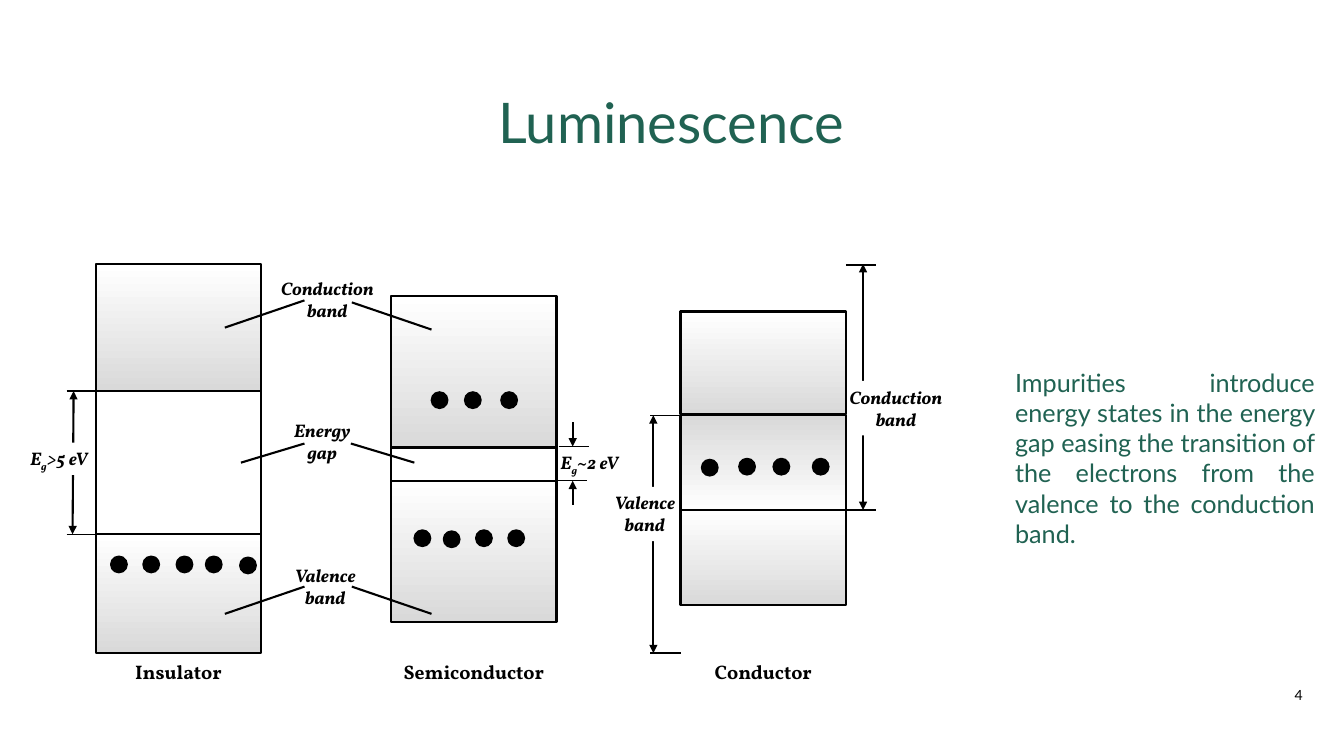
from lxml.etree import SubElement
from pptx import Presentation
from pptx.dml.color import RGBColor
from pptx.enum.shapes import MSO_CONNECTOR as Conn, MSO_SHAPE as Kind
from pptx.enum.text import MSO_ANCHOR as Anchor, MSO_AUTO_SIZE as Auto, PP_ALIGN as Align
from pptx.oxml import parse_xml
from pptx.oxml.ns import nsdecls, qn
from pptx.util import Emu, Pt

# One px is a hundredth of an inch
SCALE = 9144
BLACK = RGBColor(0, 0, 0)
WHITE = RGBColor(255, 255, 255)
GREY = RGBColor(0xD9, 0xD9, 0xD9)
GREEN = RGBColor(0x20, 0x62, 0x52)

TITLE = {"name": "Lato", "size": Pt(40)}
BODY = {"name": "Lato", "size": Pt(18)}
PAGE = {"name": "Lato", "size": Pt(10)}
NAME = {"name": "Vollkorn", "size": Pt(14), "bold": True}
LABEL = {"name": "Vollkorn", "size": Pt(13), "bold": True, "italic": True}

# Left edges of the three columns and their common width
LEFTS = {"Insulator": 95, "Semiconductor": 388, "Conductor": 675}
WIDE = 164
DOT = 16


def px(*vals):
    return [Emu(val * SCALE) for val in vals]


def add_text(slide, place, parts, form, color=BLACK, align=Align.CENTER,
             anchor=Anchor.TOP, fill=None, wrap=True, grow=True):
    """Place one paragraph; every second part is a subscript."""
    box = slide.shapes.add_textbox(*px(*place))
    if fill is not None:
        box.fill.solid()
        box.fill.fore_color.rgb = fill
    frame = box.text_frame
    frame.word_wrap = wrap
    frame.auto_size = Auto.SHAPE_TO_FIT_TEXT if grow else Auto.NONE
    frame.vertical_anchor = anchor
    para = frame.paragraphs[0]
    para.alignment = align
    for i, part in enumerate(parts):
        run = para.add_run()
        run.text = part
        for key, val in form.items():
            setattr(run.font, key, val)
        run.font.color.rgb = color
        if i % 2:
            run._r.get_or_add_rPr().set("baseline", "-25000")
    return box


def add_glow(box):
    """Give the text a soft drop shadow."""
    props = box.text_frame.paragraphs[0].runs[0]._r.get_or_add_rPr()
    props.find(qn("a:solidFill")).addnext(parse_xml(
        f'<a:effectLst {nsdecls("a")}>'
        '<a:outerShdw blurRad="38100" dist="19050" dir="2700000" algn="tl">'
        '<a:srgbClr val="000000"><a:alpha val="40000"/></a:srgbClr>'
        '</a:outerShdw></a:effectLst>'))


def add_shape(slide, kind, place, fill, width):
    shape = slide.shapes.add_shape(kind, *px(*place))
    shape.shadow.inherit = False
    shape.fill.solid()
    shape.fill.fore_color.rgb = fill
    shape.line.color.rgb = BLACK
    shape.line.width = Pt(width)
    return shape


def add_band(slide, left, top, high, angle=270):
    """Draw a band that shades from white to grey."""
    band = add_shape(slide, Kind.RECTANGLE, (left, top, WIDE, high), WHITE, 1.5)
    band.fill.gradient()
    band.fill.gradient_angle = angle
    for stop, color in zip(band.fill.gradient_stops, (WHITE, GREY)):
        stop.color.rgb = color


def add_dots(slide, spots):
    for left, top in spots:
        add_shape(slide, Kind.OVAL, (left, top, DOT, DOT), BLACK, 1.25)


def add_line(slide, ends, width=1.5, tips=()):
    line = slide.shapes.add_connector(Conn.STRAIGHT, *px(*ends))
    line.line.color.rgb = BLACK
    line.line.width = Pt(width)
    for tip in tips:
        SubElement(line.line._get_or_add_ln(), qn(f"a:{tip}"), type="triangle")
    SubElement(line._element.spPr, qn("a:effectLst"))


def add_sizes(slide):
    """Draw the range arrows with the labels that sit on them."""
    both = ("headEnd", "tailEnd")
    for left, top, tail in ((546, 443, "~2 eV"), (20, 439, ">5 eV")):
        if left == 20:
            add_line(slide, (72, 530, 73, 388), tips=both)
        add_text(slide, (left, top, 82, 32), ("E", "g", tail), LABEL,
                 align=Align.LEFT, fill=WHITE, wrap=False)
    for ends, place, text in (
        ((856, 506, 856, 262), (830, 378, 117, 54), "Conduction band"),
        ((648, 648, 648, 412), (591, 483, 97, 54), "Valence band"),
    ):
        add_line(slide, ends, tips=both)
        add_text(slide, place, (text,), LABEL, fill=WHITE)


def add_bands(slide):
    ins, semi, cond = LEFTS.values()
    # Energy gaps
    for left, top in ((semi, 365), (ins, 374)):
        add_shape(slide, Kind.RECTANGLE, (left, top, WIDE, 165), WHITE, 1.5)
    # Bands, with the overlap of the conductor shaded the other way
    for left, top, high in ((semi, 477, 140), (semi, 294, 150), (ins, 262, 126),
                            (ins, 530, 118), (cond, 506, 94), (cond, 309, 102)):
        add_band(slide, left, top, high)
    add_band(slide, cond, 412, 94, angle=90)
    # Electrons
    add_dots(slide, ((110, 552), (142, 552), (175, 552), (204, 552), (238, 553)))
    add_dots(slide, ((411, 526), (440, 527), (472, 526), (504, 526)))
    add_dots(slide, ((x, 389) for x in (428, 461, 497)))
    add_dots(slide, ((696, 456), (733, 455), (767, 455), (806, 455)))


def add_marks(slide):
    # Ticks at the ends of the ranges
    for left, top in ((839, 263), (839, 506), (645, 412), (645, 648),
                      (66, 388), (66, 530), (554, 443), (552, 477)):
        add_line(slide, (left, top, left + 30, top), width=1)
    # Arrows that close in on the narrow gap
    for tip, end in ((443, 419), (477, 501)):
        add_line(slide, (568, tip, 568, end), tips=("headEnd",))
    # Leaders from the shared labels
    for ends in ((223, 325, 302, 298), (223, 609, 302, 582), (428, 609, 349, 582),
                 (428, 327, 349, 300), (411, 459, 348, 440), (302, 440, 239, 459)):
        add_line(slide, ends)


def main():
    deck = Presentation()
    deck.slide_width, deck.slide_height = px(1333, 750)
    slide = deck.slides.add_slide(deck.slide_layouts[6])

    # Title
    title = add_text(slide, (100, 67, 1132, 106), ("Luminescence",), TITLE, GREEN,
                     anchor=Anchor.MIDDLE, grow=False)
    add_glow(title)

    # Band diagram
    add_sizes(slide)
    add_bands(slide)
    add_marks(slide)
    for name, left in LEFTS.items():
        add_text(slide, (left, 650, WIDE, 34), (name,), NAME)
    for left, top, wide, text in ((260, 270, 129, "Conduction band"),
                                  (280, 411, 79, "Energy gap"),
                                  (278, 555, 89, "Valence band")):
        add_text(slide, (left, top, wide, 54), (text,), LABEL)

    # Remark and page number
    add_text(slide, (997, 359, 317, 162), (
        "Impurities introduce energy states in the energy gap easing the transition "
        "of the electrons from the valence to the conduction band.",
    ), BODY, GREEN, Align.JUSTIFY)
    add_text(slide, (1220, 669, 82, 40), ("4",), PAGE, align=Align.RIGHT,
             anchor=Anchor.MIDDLE, grow=False)

    deck.save("out.pptx")


if __name__ == "__main__":
    main()
